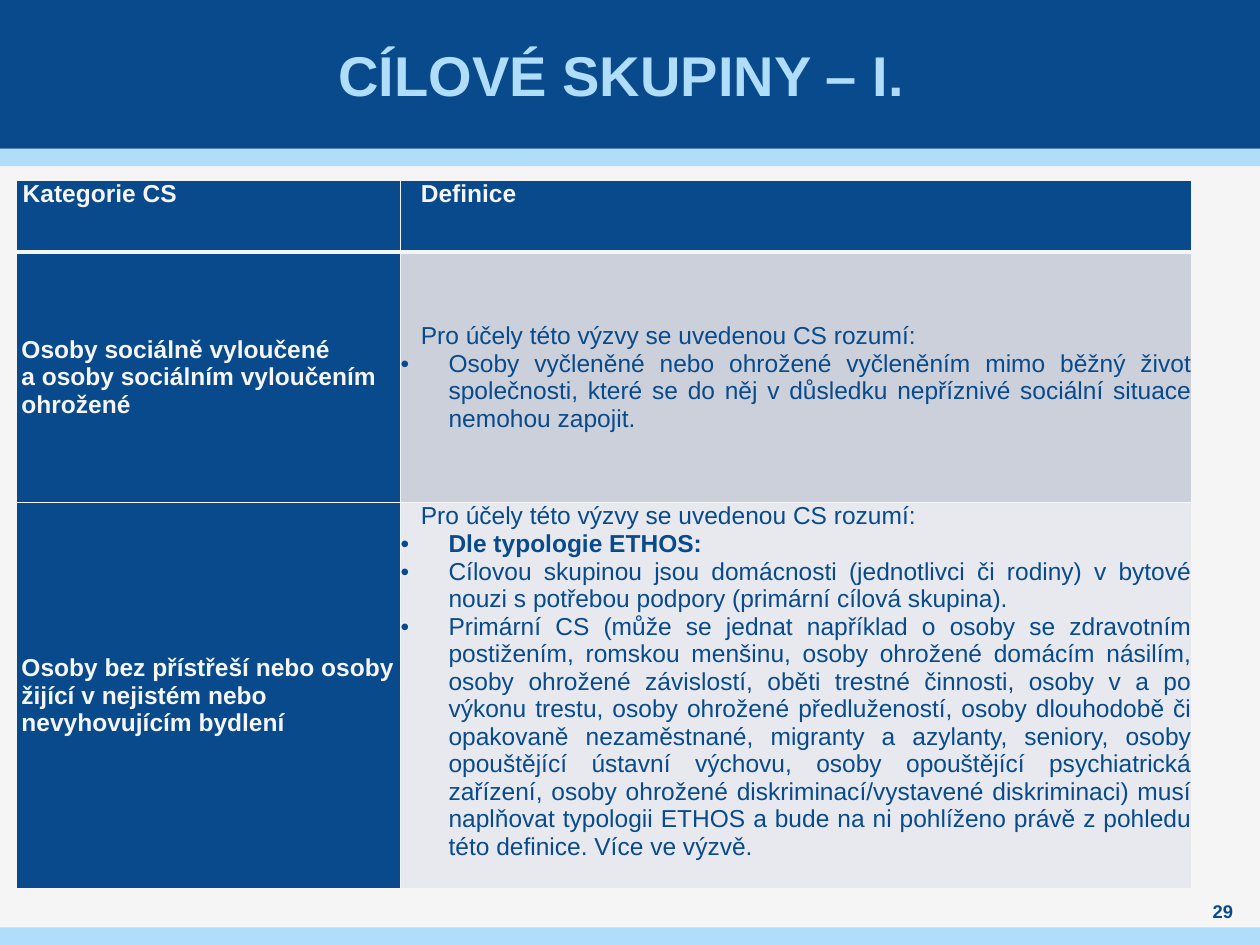
from lxml.etree import SubElement
from pptx import Presentation
from pptx.dml.color import RGBColor
from pptx.enum.shapes import MSO_SHAPE
from pptx.enum.text import MSO_ANCHOR, MSO_AUTO_SIZE, PP_ALIGN
from pptx.oxml import parse_xml
from pptx.oxml.ns import nsdecls, qn
from pptx.util import Inches, Pt

NAVY, SKY, PALE = "084A8B", "AFDDFA", "F5F5F5"
GREY, LIGHT = "CCD0DA", "E7E9EE"
LEAD = "Pro účely této výzvy se uvedenou CS rozumí:"
ETHOS = "Dle typologie ETHOS:"
ROWS = [
    ("Osoby sociálně vyloučené\na osoby sociálním vyloučením ohrožené", GREY, [
        "Osoby vyčleněné nebo ohrožené vyčleněním mimo běžný život společnosti, "
        "které se do něj v důsledku nepříznivé sociální situace nemohou zapojit.",
    ]),
    ("Osoby bez přístřeší nebo osoby žijící v nejistém nebo nevyhovujícím bydlení", LIGHT, [
        ETHOS,
        "Cílovou skupinou jsou domácnosti (jednotlivci či rodiny) v bytové nouzi "
        "s potřebou podpory (primární cílová skupina).",
        "Primární CS (může se jednat například o osoby se zdravotním postižením, "
        "romskou menšinu, osoby ohrožené domácím násilím, osoby ohrožené závislostí, "
        "oběti trestné činnosti, osoby v a po výkonu trestu, osoby ohrožené "
        "předlužeností, osoby dlouhodobě či opakovaně nezaměstnané, migranty a azylanty, "
        "seniory, osoby opouštějící ústavní výchovu, osoby opouštějící psychiatrická "
        "zařízení, osoby ohrožené diskriminací/vystavené diskriminaci) musí naplňovat "
        "typologii ETHOS a bude na ni pohlíženo právě z pohledu této definice. "
        "Více ve výzvě.",
    ]),
]


def tint(code):
    return RGBColor.from_string(code)


def write(para, text, size=14, color=PALE, bold=False, align=PP_ALIGN.LEFT,
          left=0, dot=False):
    para.text = text
    para.alignment = align
    for run in para.runs:
        font = run.font
        font.name, font.size, font.bold = "Arial", Pt(size), bold
        font.color.rgb = tint(color)
    for gap in para._p.findall(qn("a:br")):
        SubElement(gap, qn("a:rPr"), sz=str(size * 100))
    props = para._p.get_or_add_pPr()
    props.set("marL", str(Inches(left)))
    props.set("indent", str(Inches(-left if dot else 0)))
    if dot:
        SubElement(props, qn("a:buFont"), typeface="Arial")
        SubElement(props, qn("a:buChar"), char="•")


def inset(box, side=0):
    box.margin_left = box.margin_right = Inches(side)
    box.margin_top = box.margin_bottom = 0


def band(slide, top, height, color):
    shape = slide.shapes.add_shape(
        MSO_SHAPE.RECTANGLE, 0, Inches(top), Inches(10), Inches(height))
    shape.shadow.inherit = False
    shape.fill.solid()
    shape.fill.fore_color.rgb = tint(color)
    shape.line.fill.background()


def place(shape, left, top, width, height):
    shape.left, shape.top = Inches(left), Inches(top)
    shape.width, shape.height = Inches(width), Inches(height)


def head(slide):
    title = slide.shapes.title
    place(title, 0.39, 0, 9.21, 1.18)
    slide.shapes._spTree.append(title._element)
    frame = title.text_frame
    frame.auto_size = MSO_AUTO_SIZE.NONE
    frame.vertical_anchor = MSO_ANCHOR.MIDDLE
    inset(frame, 0.04)
    write(frame.paragraphs[0], "CÍLOVÉ SKUPINY – I. ", size=32, color=SKY,
          bold=True, align=PP_ALIGN.CENTER)


def style(cell, color, base=1, anchor=MSO_ANCHOR.MIDDLE):
    cell.fill.solid()
    cell.fill.fore_color.rgb = tint(color)
    cell.vertical_anchor = anchor
    inset(cell)
    props = cell._tc.get_or_add_tcPr()
    for spot, side in enumerate("LRTB"):
        width = Pt(base if side == "B" else 1)
        props.insert(spot, parse_xml(
            f'<a:ln{side} {nsdecls("a")} w="{width}"><a:solidFill>'
            f'<a:srgbClr val="{PALE}"/></a:solidFill></a:ln{side}>'))


def grid(slide):
    table = slide.shapes.add_table(
        3, 2, Inches(0.13), Inches(1.43), Inches(9.33), Inches(5.62)).table
    for col, width in zip(table.columns, (3.05, 6.28)):
        col.width = Inches(width)
    for row, height in zip(table.rows, (0.57, 1.99, 3.06)):
        row.height = Inches(height)
    for col, (text, left) in enumerate((("Kategorie CS", 0.05), ("Definice", 0.16))):
        cell = table.cell(0, col)
        style(cell, NAVY, base=3, anchor=MSO_ANCHOR.TOP)
        write(cell.text_frame.paragraphs[0], text, bold=True, left=left)
    for row, (name, color, points) in enumerate(ROWS, 1):
        group, body = table.cell(row, 0), table.cell(row, 1)
        style(group, NAVY)
        write(group.text_frame.paragraphs[0], name, bold=True, left=0.04)
        style(body, color)
        frame = body.text_frame
        write(frame.paragraphs[0], LEAD, color=NAVY, align=PP_ALIGN.JUSTIFY, left=0.16)
        for point in points:
            write(frame.add_paragraph(), point, color=NAVY, bold=point == ETHOS,
                  align=PP_ALIGN.JUSTIFY, left=0.38, dot=True)
    table.cell(2, 1).margin_bottom = Inches(0.22)


def number(slide):
    box = slide.shapes.add_textbox(
        Inches(9.45), Inches(7.13), Inches(0.51), Inches(0.2))
    frame = box.text_frame
    frame.word_wrap = True
    frame.vertical_anchor = MSO_ANCHOR.MIDDLE
    inset(frame)
    write(frame.paragraphs[0], "29", size=10.5, color=NAVY, bold=True,
          align=PP_ALIGN.CENTER)


def main():
    deck = Presentation()
    deck.slide_width, deck.slide_height = Inches(10), Inches(7.5)
    slide = deck.slides.add_slide(deck.slide_layouts[5])
    slide.background.fill.solid()
    slide.background.fill.fore_color.rgb = tint(PALE)
    band(slide, 1.18, 0.14, SKY)
    band(slide, 0, 1.18, NAVY)
    band(slide, 7.36, 0.14, SKY)
    head(slide)
    grid(slide)
    number(slide)
    deck.save("out.pptx")


if __name__ == "__main__":
    main()
